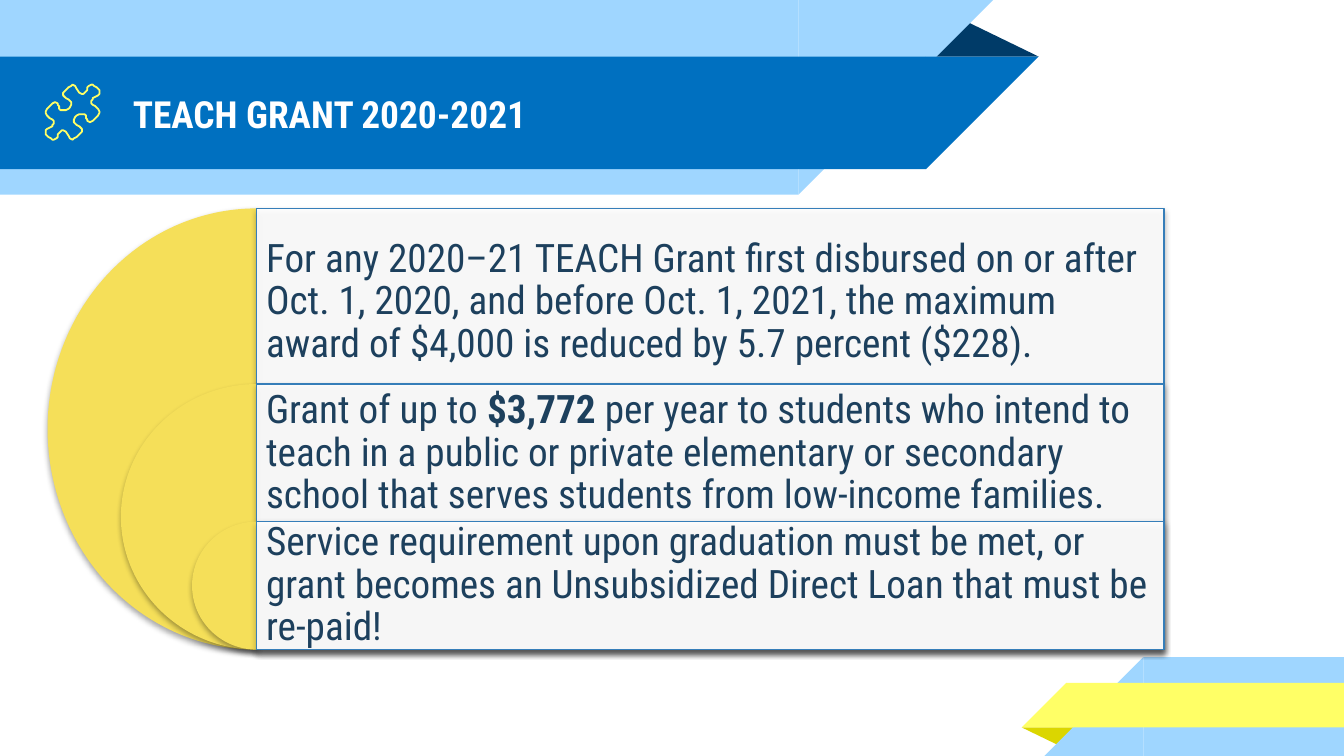
from lxml import etree
from pptx import Presentation
from pptx.dml.color import RGBColor
from pptx.enum.shapes import MSO_SHAPE
from pptx.enum.text import MSO_ANCHOR
from pptx.oxml.ns import qn
from pptx.util import Cm, Pt

RECTANGLE = MSO_SHAPE.RECTANGLE
TRIANGLE = MSO_SHAPE.ISOSCELES_TRIANGLE
RIGHT_TRIANGLE = MSO_SHAPE.RIGHT_TRIANGLE
PIE = MSO_SHAPE.PIE
MIDDLE = MSO_ANCHOR.MIDDLE

WIDTH, HEIGHT = 25.4, 14.29
COLORS = {
    "white": "FFFFFF",
    "sky": "9FD6FF",
    "blue": "0070C0",
    "navy": "003B68",
    "yellow": "FFFF66",
    "olive": "DBD600",
    "gold": "F5DF59",
    "border": "367EB9",
    "ink": "1D405D",
    "shadow": "000000",
}

PUZZLE_CENTER = (108, 167)
PUZZLE_HALF = [
    (69, 73), (71, 72), (73, 71), (74, 70), (74, 67), (73, 66), (72, 65),
    (70, 64), (69, 63), (68, 63), (66, 64), (65, 65), (65, 67), (64, 68),
    (63, 69), (62, 70), (61, 70), (59, 69), (57, 66), (56, 64), (54, 63),
    (53, 64), (51, 65), (49, 67), (47, 69), (47, 71), (48, 72), (49, 73),
    (51, 74), (52, 75), (53, 76), (53, 78), (52, 80), (51, 81), (49, 82),
    (47, 82), (45, 82), (44, 81), (44, 79), (43, 78), (43, 77), (41, 76),
    (39, 77), (37, 79), (35, 81), (34, 83), (34, 84), (35, 86), (37, 88),
    (39, 89), (40, 90), (40, 92), (39, 93),
]

PANEL_LEFT, PANEL_WIDTH, PANEL_BOTTOM = 4.85, 17.15, 12.28
PANELS = [
    (3.94, 7.9, 3.54, [
        ("For any 2020–21 TEACH Grant first disbursed on or after Oct. 1, 2020, "
         "and before Oct. 1, 2021, the maximum award of $4,000 is reduced by "
         "5.7 percent ($228).", False),
    ]),
    (7.26, 5.13, 2.62, [
        ("Grant of up to ", False),
        ("$3,772 ", True),
        ("per year to students who intend to teach in a public or private "
         "elementary or secondary school that serves students from low-income "
         "families.", False),
    ]),
    (9.86, 2.44, 2.42, [
        ("Service requirement upon graduation must be met, or grant becomes an "
         "Unsubsidized Direct Loan that must be re-paid!", False),
    ]),
]


def rgb(name):
    return RGBColor.from_string(COLORS[name])


def add_alpha(color, percent):
    etree.SubElement(color, qn("a:alpha"), val=str(percent * 1000))


class SlideBuilder:
    font = "Roboto Condensed"

    def __init__(self, slide):
        self.shapes = slide.shapes

    def shape(self, kind, left, top, width, height, fill, rotation=0, adjust=()):
        shape = self.shapes.add_shape(kind, Cm(left), Cm(top), Cm(width), Cm(height))
        shape.shadow.inherit = False
        shape.fill.solid()
        shape.fill.fore_color.rgb = rgb(fill)
        shape.line.fill.background()
        shape.rotation = rotation
        for index, value in enumerate(adjust):
            shape.adjustments[index] = value
        return shape

    def left_ribbon(self, top, length, height, fill):
        self.shape(RECTANGLE, 0, top, length, height, fill)
        self.shape(RIGHT_TRIANGLE, length, top, height, height, fill, 90)

    def right_ribbon(self, left, top, height, fill):
        body = left + height
        self.shape(RECTANGLE, body, top, WIDTH - body, height, fill)
        self.shape(RIGHT_TRIANGLE, left, top, height, height, fill, 270)

    def drop_shadow(self, shape):
        effects = shape._element.spPr.find(qn("a:effectLst"))
        shadow = etree.SubElement(
            effects, qn("a:outerShdw"), blurRad=str(Pt(3.1)), dist=str(Pt(1.8)),
            dir="5400000", algn="ctr", rotWithShape="0")
        color = etree.SubElement(shadow, qn("a:srgbClr"), val=COLORS["shadow"])
        add_alpha(color, 35)

    def half_disc(self, top, width):
        disc = self.shape(PIE, PANEL_LEFT - width / 2, top, width,
                          PANEL_BOTTOM - top, "gold", adjust=(54, 162))
        self.drop_shadow(disc)

    def panel(self, top):
        panel = self.shape(RECTANGLE, PANEL_LEFT, top, PANEL_WIDTH,
                           PANEL_BOTTOM - top, "white")
        add_alpha(panel._element.spPr.find(qn("a:solidFill"))[0], 90)
        panel.line.color.rgb = rgb("border")
        panel.line.width = Pt(0.75)
        self.drop_shadow(panel)

    def text(self, left, top, width, height, runs, size, color, inset, spacing=1.0):
        box = self.shapes.add_textbox(Cm(left), Cm(top), Cm(width), Cm(height))
        frame = box.text_frame
        frame.word_wrap = True
        frame.vertical_anchor = MIDDLE
        frame.margin_left = frame.margin_right = Cm(inset)
        frame.margin_top = frame.margin_bottom = Cm(inset)
        paragraph = frame.paragraphs[0]
        paragraph.line_spacing = spacing
        for wording, bold in runs:
            run = paragraph.add_run()
            run.text = wording
            run.font.name = self.font
            run.font.size = Pt(size)
            run.font.bold = bold
            run.font.color.rgb = rgb(color)

    def puzzle_piece(self):
        center_x, center_y = PUZZLE_CENTER
        opposite = [(center_x - x, center_y - y) for x, y in PUZZLE_HALF]
        start, *rest = PUZZLE_HALF + opposite
        outline = self.shapes.build_freeform(*start, scale=Cm(0.0254))
        outline.add_line_segments(rest, close=True)
        piece = outline.convert_to_shape()
        piece.shadow.inherit = False
        piece.fill.background()
        piece.line.color.rgb = rgb("yellow")
        piece.line.width = Pt(0.96)


def main():
    presentation = Presentation()
    presentation.slide_width = Cm(WIDTH)
    presentation.slide_height = Cm(HEIGHT)
    builder = SlideBuilder(presentation.slides.add_slide(presentation.slide_layouts[6]))

    builder.shape(TRIANGLE, 17.48, 0.36, 2.15, 0.71, "navy", adjust=(0.32,))
    builder.left_ribbon(0, 15.09, 3.68, "sky")
    builder.left_ribbon(1.07, 17.5, 2.13, "blue")

    builder.shape(TRIANGLE, 19.31, 13.75, 1.09, 0.36, "olive", 180, (0.32,))
    builder.right_ribbon(19.74, 12.42, 1.87, "sky")
    builder.right_ribbon(19.31, 12.91, 0.84, "yellow")

    for top, disc_width, text_height, runs in PANELS:
        builder.half_disc(top, disc_width)
        builder.panel(top)
        builder.text(PANEL_LEFT, top, PANEL_WIDTH, text_height, runs, 21, "ink", 0.18, 0.9)

    builder.text(2.26, 1.09, 15.65, 2.13, [("TEACH GRANT 2020-2021", True)], 20, "white", 0.25)
    builder.puzzle_piece()

    presentation.save("out.pptx")


if __name__ == "__main__":
    main()
